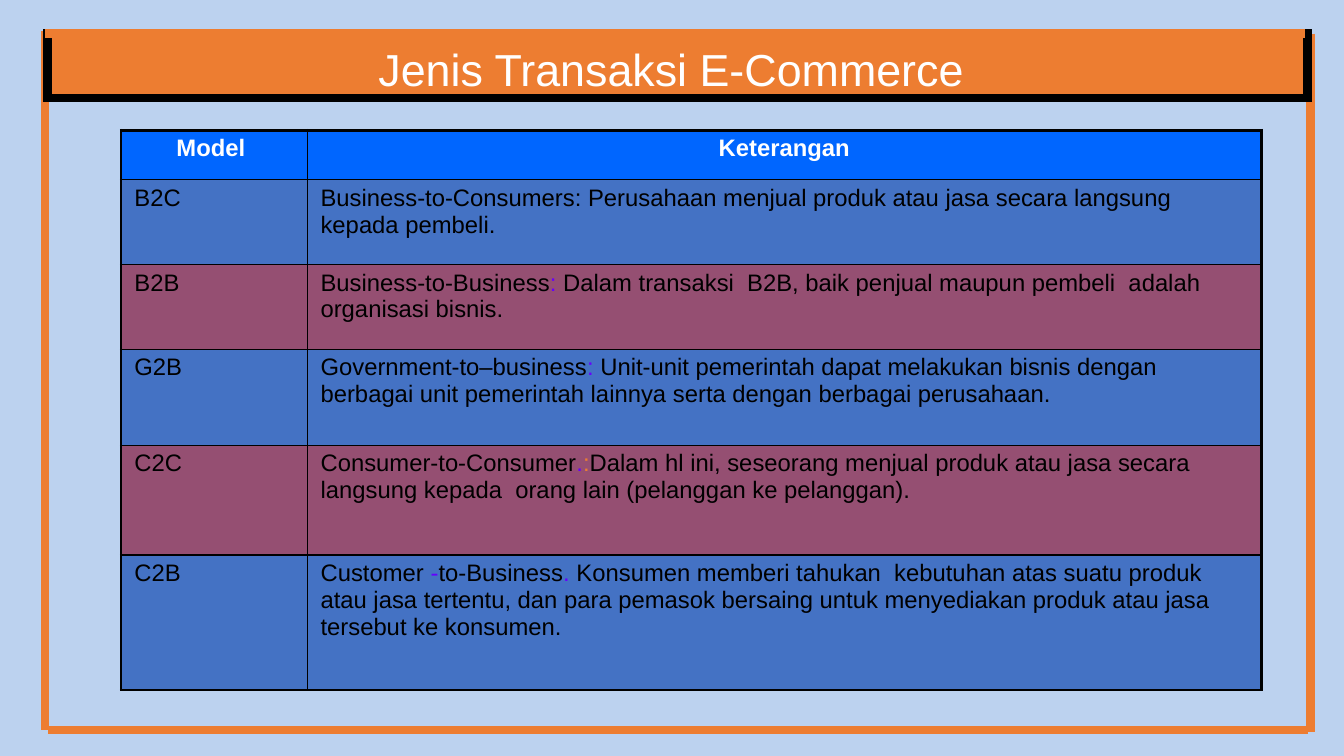
from lxml.etree import SubElement as sub_element
from pptx import Presentation
from pptx.dml.color import RGBColor
from pptx.enum.shapes import MSO_CONNECTOR as Connector
from pptx.enum.text import MSO_ANCHOR as Anchor, MSO_AUTO_SIZE as AutoSize, PP_ALIGN as Align
from pptx.oxml import parse_xml
from pptx.oxml.ns import nsdecls, qn
from pptx.util import Pt

ORANGE, BLACK, WHITE, VIOLET = "ED7D31", "000000", "FFFFFF", "6600FF"
HEADER_BLUE, ROW_BLUE, ROW_PLUM = "0066FF", "4472C4", "954F72"


def colour(hex_text):
    return RGBColor.from_string(hex_text)


class SlideBuilder:
    font = "Arial"
    frame_width = 6
    outer_border, inner_border = 2.25, 1

    def __init__(self, deck, background):
        self.page = deck.slides.add_slide(deck.slide_layouts[5])
        self.page.background.fill.solid()
        self.page.background.fill.fore_color.rgb = colour(background)

    def line(self, x1, y1, x2, y2):
        line = self.page.shapes.add_connector(
            Connector.STRAIGHT, Pt(x1), Pt(y1), Pt(x2), Pt(y2))
        line.line.color.rgb = colour(ORANGE)
        line.line.width = Pt(self.frame_width)
        sub_element(line.element.spPr, qn("a:effectLst"))

    def add_spans(self, para, spans, size, bold=False, align=Align.LEFT):
        para.alignment = align
        for text, text_colour in spans:
            span = para.add_run()
            span.text = text
            span.font.name, span.font.size, span.font.bold = self.font, Pt(size), bold
            span.font.color.rgb = colour(text_colour)

    def title(self, text, left, top, width, height):
        box = self.page.shapes.title
        box.left, box.top, box.width, box.height = Pt(left), Pt(top), Pt(width), Pt(height)
        box.fill.solid()
        box.fill.fore_color.rgb = colour(ORANGE)
        box.line.color.rgb = colour(BLACK)
        box.line.width = Pt(self.frame_width)
        sub_element(box.element.spPr.find(qn("a:ln")), qn("a:miter"), lim="800000")
        box.shadow.inherit = False
        frame = box.text_frame
        frame.word_wrap, frame.auto_size = True, AutoSize.NONE
        frame.vertical_anchor = Anchor.MIDDLE
        frame.margin_top, frame.margin_bottom = Pt(6), Pt(1.5)
        self.add_spans(frame.paragraphs[0], [(text, WHITE)], 32, align=Align.CENTER)
        # Bring the title in front of the lines drawn so far
        self.page.shapes[-1].element.addnext(box.element)

    def borders(self, cell, outer_sides):
        properties = cell._tc.get_or_add_tcPr()
        for index, side in enumerate("LRTB"):
            points = self.outer_border if side in outer_sides else self.inner_border
            properties.insert(index, parse_xml(
                f'<a:ln{side} {nsdecls("a")} w="{Pt(points)}"><a:solidFill>'
                f'<a:srgbClr val="{BLACK}"/></a:solidFill></a:ln{side}>'))

    def table(self, rows, left, top, widths, heights):
        table = self.page.shapes.add_table(
            len(rows), len(widths), Pt(left), Pt(top),
            Pt(sum(widths)), Pt(sum(heights))).table
        for column, width in zip(table.columns, widths):
            column.width = Pt(width)
        for r, (cells, height) in enumerate(zip(rows, heights)):
            table.rows[r].height = Pt(height)
            header = r == 0
            fill = HEADER_BLUE if header else ROW_BLUE if r % 2 else ROW_PLUM
            for c, spans in enumerate(cells):
                cell = table.cell(r, c)
                cell.fill.solid()
                cell.fill.fore_color.rgb = colour(fill)
                cell.margin_left = cell.margin_right = Pt(9.5)
                cell.margin_top = cell.margin_bottom = Pt(3.6)
                self.add_spans(cell.text_frame.paragraphs[0], spans, 17, header,
                               Align.CENTER if header else Align.LEFT)
                edges = {"L": c == 0, "R": c == len(widths) - 1,
                         "T": header, "B": r == len(rows) - 1}
                self.borders(cell, [side for side, outer in edges.items() if outer])


MODELS = [
    ("B2C", [("Business-to-Consumers: Perusahaan menjual produk atau jasa secara "
              "langsung kepada pembeli.", BLACK)]),
    ("B2B", [("Business-to-Business", BLACK), (": ", VIOLET),
             ("Dalam transaksi  B2B, baik penjual maupun pembeli  adalah "
              "organisasi bisnis.", BLACK)]),
    ("G2B", [("Government-to–business", BLACK), (":", VIOLET),
             (" Unit-unit pemerintah dapat melakukan bisnis dengan berbagai unit "
              "pemerintah lainnya serta dengan berbagai perusahaan.", BLACK)]),
    ("C2C", [("Consumer-to-Consumer", BLACK), (".", VIOLET), (":", ORANGE),
             ("Dalam hl ini, seseorang menjual produk atau jasa secara langsung "
              "kepada  orang lain (pelanggan ke pelanggan).", BLACK)]),
    ("C2B", [("Customer", BLACK), (" -", VIOLET), ("to-Business", BLACK), (". ", VIOLET),
             ("Konsumen memberi tahukan  kebutuhan atas suatu produk atau jasa "
              "tertentu, dan para pemasok bersaing untuk menyediakan produk atau "
              "jasa tersebut ke konsumen.", BLACK)]),
]


def main():
    deck = Presentation()
    deck.slide_width, deck.slide_height = Pt(960), Pt(540)
    slide = SlideBuilder(deck, "BCD2EF")

    # Frame: bottom, left and right
    slide.line(34, 521.5, 934, 521.5)
    slide.line(32, 22.5, 32, 521.5)
    slide.line(936, 24, 936, 523)

    # Title bar with the top of the frame over it
    slide.title("Jenis Transaksi E-Commerce ", 34, 24, 900, 46)
    slide.line(32, 24, 932, 24)

    # Transaction models
    header = [[("Model ", WHITE)], [("Keterangan", WHITE)]]
    body = [[[(model, BLACK)], spans] for model, spans in MODELS]
    slide.table([header] + body, 86.5, 93, [133, 681.5],
                [35.5, 60.5, 60.5, 68.5, 78.5, 96.5])

    deck.save("out.pptx")


if __name__ == "__main__":
    main()
